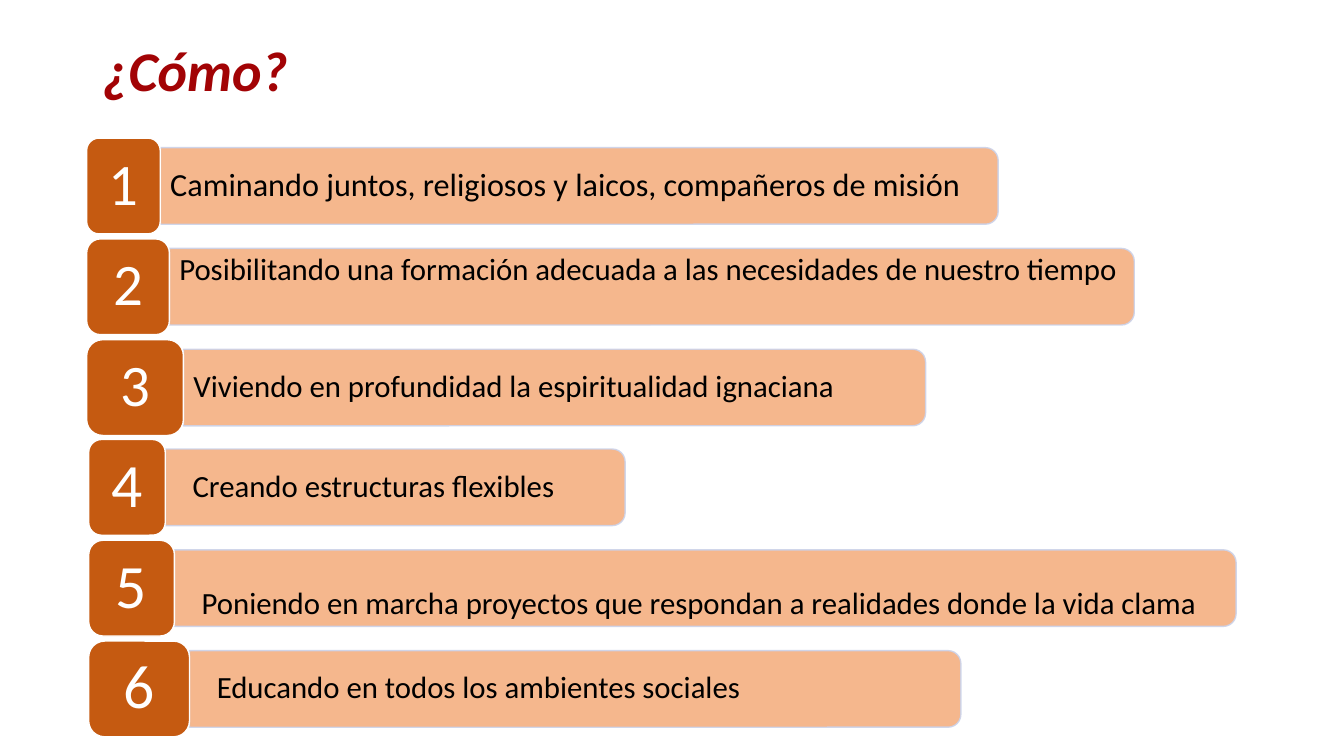
"""Builds the slide that lists six numbered ways forward."""
from dataclasses import dataclass

from lxml import etree
from pptx import Presentation
from pptx.dml.color import RGBColor
from pptx.enum.shapes import MSO_SHAPE
from pptx.enum.text import MSO_ANCHOR, PP_ALIGN
from pptx.oxml.ns import qn
from pptx.util import Inches, Pt

ROUNDED = MSO_SHAPE.ROUNDED_RECTANGLE
ROUNDED_END = MSO_SHAPE.ROUND_2_SAME_RECTANGLE
TOP, MIDDLE, BOTTOM = MSO_ANCHOR.TOP, MSO_ANCHOR.MIDDLE, MSO_ANCHOR.BOTTOM
LEFT, CENTER = PP_ALIGN.LEFT, PP_ALIGN.CENTER


@dataclass(frozen=True)
class Theme:
    """Holds the font, colours and type sizes."""
    font: str = "Calibri"
    title: str = "A20305"
    ink: str = "000000"
    badge: str = "C55A11"
    bar: str = "F4B081"
    bar_edge: str = "CCD3EA"
    white: str = "FFFFFF"
    title_size: int = 40
    lead_size: int = 23
    body_size: int = 22
    upper_number_size: int = 42
    lower_number_size: int = 44
    corner: float = 0.167
    bar_opacity: int = 90


class SlideBuilder:
    """Draws styled elements on one slide."""

    def __init__(self, slide, theme):
        """Keeps the slide and its theme."""
        self.slide = slide
        self.theme = theme

    def fill_text(self, frame, text, size, color, anchor=MIDDLE, align=LEFT,
                  insets=(0.1, 0.05), strong=False):
        """Fills a text frame with one styled run."""
        frame.word_wrap = True
        frame.vertical_anchor = anchor
        frame.margin_left = frame.margin_right = Inches(insets[0])
        frame.margin_top = frame.margin_bottom = Inches(insets[1])
        paragraph = frame.paragraphs[0]
        paragraph.alignment = align
        paragraph.line_spacing = 0.9
        run = paragraph.add_run()
        run.text = text
        run.font.name = self.theme.font
        run.font.size = Pt(size)
        run.font.bold = run.font.italic = strong
        run.font.color.rgb = RGBColor.from_string(color)

    def text(self, left, top, width, height, text, size, color, **style):
        """Adds a text box."""
        box = self.slide.shapes.add_textbox(
            Inches(left), Inches(top), Inches(width), Inches(height))
        self.fill_text(box.text_frame, text, size, color, **style)

    def shape(self, kind, left, top, width, height, fill, edge):
        """Adds a filled shape with a thin outline."""
        shape = self.slide.shapes.add_shape(
            kind, Inches(left), Inches(top), Inches(width), Inches(height))
        shape.shadow.inherit = False
        shape.adjustments[0] = self.theme.corner
        shape.fill.solid()
        shape.fill.fore_color.rgb = RGBColor.from_string(fill)
        shape.line.color.rgb = RGBColor.from_string(edge)
        shape.line.width = Pt(1)
        return shape

    def bar(self, left, middle, length, height):
        """Adds a translucent bar rounded at its right end."""
        bar = self.shape(ROUNDED_END, left + (length - height) / 2,
                         middle - length / 2, height, length,
                         self.theme.bar, self.theme.bar_edge)
        bar.rotation = 90
        for color in bar.element.spPr.iter(qn("a:srgbClr")):
            alpha = etree.SubElement(color, qn("a:alpha"))
            alpha.set("val", str(self.theme.bar_opacity * 1000))

    def badge(self, left, top, width, height, number, size):
        """Adds a numbered badge."""
        badge = self.shape(ROUNDED, left, top, width, height,
                           self.theme.badge, self.theme.white)
        self.fill_text(badge.text_frame, number, size, self.theme.white,
                       align=CENTER)


THEME = Theme()
BADGE_HEIGHT, BAR_HEIGHT, LABEL_HEIGHT = 0.95, 0.76, 0.69
ROW_PITCH = 1.0

UPPER_STEPS = [
    ("Caminando juntos, religiosos y laicos, compañeros de misión",
     0.73, 8.31, THEME.lead_size, MIDDLE),
    ("Posibilitando una formación adecuada a las necesidades de nuestro tiempo",
     0.82, 9.57, THEME.body_size, TOP),
    ("Viviendo en profundidad la espiritualidad ignaciana",
     0.96, 7.36, THEME.body_size, MIDDLE),
]
LOWER_STEPS = [
    ("Creando estructuras flexibles",
     0.76, 4.56, THEME.body_size, MIDDLE),
    ("Poniendo en marcha proyectos que respondan a realidades donde la vida clama",
     0.85, 10.53, THEME.body_size, BOTTOM),
    ("Educando en todos los ambientes sociales",
     1.0, 7.65, THEME.body_size, MIDDLE),
]
GROUPS = [
    (UPPER_STEPS, 1, 0.86, 1.37, 0.1, THEME.upper_number_size),
    (LOWER_STEPS, 4, 0.88, 4.36, 0.27, THEME.lower_number_size),
]


def main():
    """Builds and saves the presentation."""
    deck = Presentation()
    deck.slide_width, deck.slide_height = Inches(13.33), Inches(7.5)
    builder = SlideBuilder(deck.slides.add_slide(deck.slide_layouts[6]), THEME)
    builder.text(0.92, 0.4, 11.5, 0.66, "¿Cómo?", THEME.title_size,
                 THEME.title, strong=True)
    for steps, first, left, group_top, side_inset, number_size in GROUPS:
        for row, (label, badge_width, length, size, anchor) in enumerate(steps):
            top = group_top + row * ROW_PITCH
            middle = top + BADGE_HEIGHT / 2
            bar_left = left + badge_width
            builder.bar(bar_left, middle, length, BAR_HEIGHT)
            builder.text(bar_left, middle - LABEL_HEIGHT / 2, length - 0.04,
                         LABEL_HEIGHT, label, size, THEME.ink, anchor=anchor,
                         insets=(side_inset, 0.02))
            builder.badge(left, top, badge_width, BADGE_HEIGHT,
                          str(first + row), number_size)
    deck.save("out.pptx")


if __name__ == "__main__":
    main()
